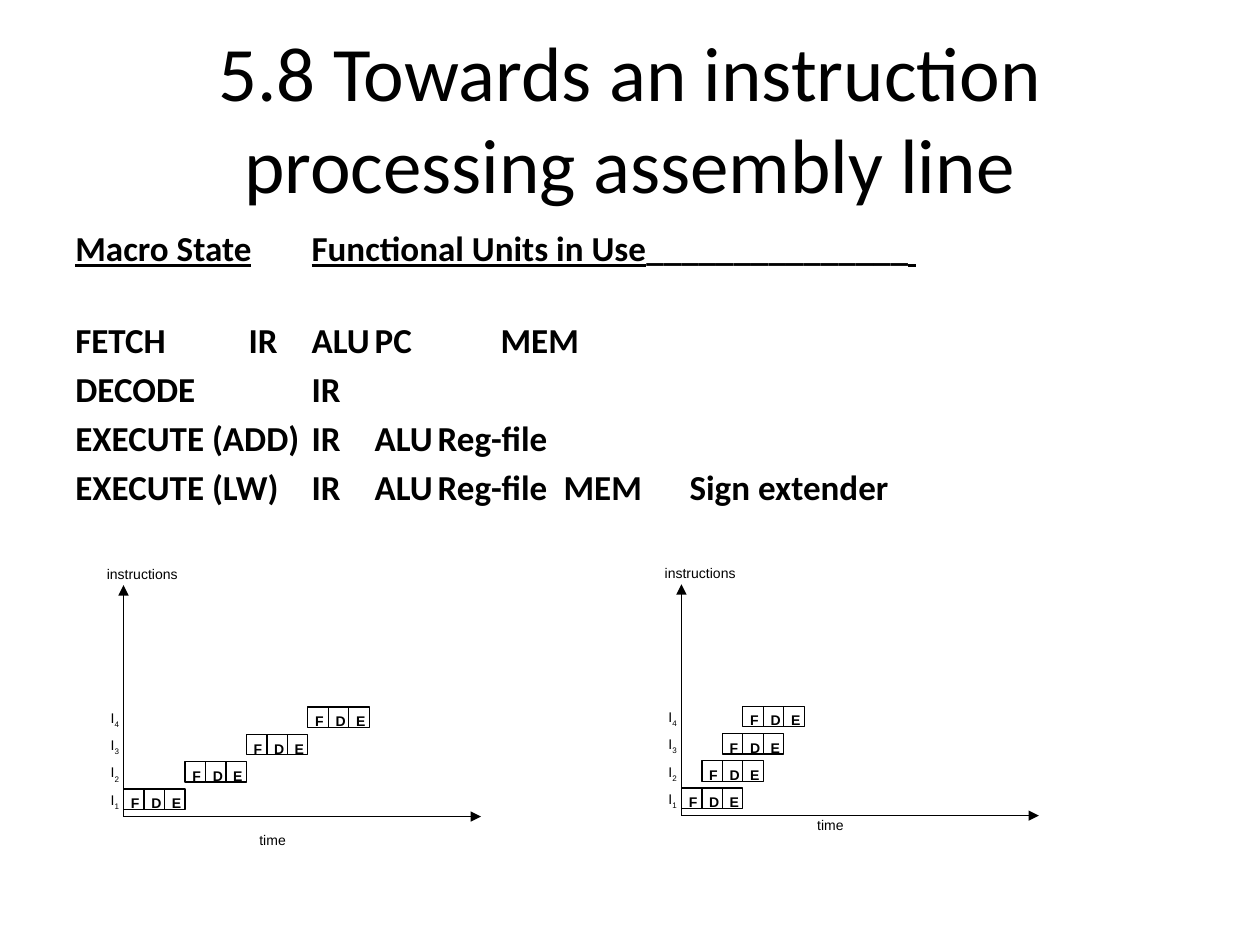
import pptx
import pptx.util
import pptx.dml.color
import pptx.enum.shapes
import pptx.enum.text
import pptx.oxml.ns
import lxml.etree

Pt = pptx.util.Pt
Kind = pptx.enum.shapes
Anchor = pptx.enum.text.MSO_ANCHOR
qn = pptx.oxml.ns.qn

TITLE = "5.8 Towards an instruction processing assembly line"
HEAD = [
    ("Macro State", True, True),
    ("\t", False, False),
    ("Functional Units in Use", True, True),
    ("_______________", True, False),
    (" ", True, True),
]
ROWS = [
    "FETCH\t\tIR\tALU\tPC \t\tMEM",
    "DECODE\t\tIR",
    "EXECUTE (ADD)\tIR\tALU\tReg-file",
    "EXECUTE (LW)\tIR\tALU\tReg-file\tMEM\tSign extender",
]
STAGES = "FDE"
COUNT = 4
CHARTS = [
    {"x": 70.6, "y": 466.6, "step": 3, "time": 7.2},
    {"x": 389.4, "y": 466.1, "step": 1, "time": -0.8},
]
CELL = 11.7
PITCH = 15.6
INK = "000000"


def color(text):
    return pptx.dml.color.RGBColor.from_string(text)


def add_run(para, text, size, font, bold=False, under=False):
    run = para.add_run()
    run.text = text
    run.font.size = Pt(size)
    run.font.name = font
    run.font.bold = bold
    run.font.underline = under
    run.font.color.rgb = color(INK)
    return run


def add_label(group, text, x, y, wide, high, bold=False, sub=None):
    frame = group.shapes.add_textbox(Pt(x), Pt(y), Pt(wide), Pt(high)).text_frame
    frame.word_wrap = True
    frame.margin_left = frame.margin_right = Pt(2.2)
    frame.margin_top = frame.margin_bottom = Pt(1.4)
    para = frame.paragraphs[0]
    add_run(para, text, 8, "Arial", bold)
    if sub:
        frame.vertical_anchor = Anchor.MIDDLE
        run = add_run(para, sub, 8, "Arial")
        run._r.get_or_add_rPr().set("baseline", "-30000")


def add_axis(group, x, y, right, up):
    axis = group.shapes.add_connector(
        Kind.MSO_CONNECTOR.STRAIGHT, Pt(x), Pt(y), Pt(x + right), Pt(y - up))
    axis.line.color.rgb = color(INK)
    axis.line.width = Pt(0.75)
    lxml.etree.SubElement(axis.line._get_or_add_ln(), qn("a:tailEnd"), type="triangle")
    lxml.etree.SubElement(axis._element.spPr, qn("a:effectLst"))


def add_cell(group, text, x, y):
    cell = group.shapes.add_shape(
        Kind.MSO_SHAPE.RECTANGLE, Pt(x), Pt(y), Pt(CELL), Pt(CELL))
    cell.shadow.inherit = False
    cell.fill.background()
    cell.line.color.rgb = color(INK)
    cell.line.width = Pt(0.75)
    add_label(group, text, x + 2, y + 2, 8.4, 9.4, bold=True)


def add_title(slide):
    title = slide.shapes.title
    title.left, title.top, title.width, title.height = Pt(36), Pt(21.6), Pt(648), Pt(90)
    frame = title.text_frame
    frame.vertical_anchor = Anchor.MIDDLE
    para = frame.paragraphs[0]
    para.alignment = pptx.enum.text.PP_ALIGN.CENTER
    add_run(para, TITLE, 44, "Calibri")


def add_body(slide):
    frame = slide.shapes.add_textbox(Pt(36), Pt(126), Pt(648), Pt(154)).text_frame
    frame.word_wrap = True
    lines = [HEAD] + [[(row, True, False)] for row in ROWS]
    for i, line in enumerate(lines):
        para = frame.add_paragraph() if i else frame.paragraphs[0]
        para.space_before = Pt(4)
        para.space_after = Pt(0 if i else 24.4)
        props = para._p.get_or_add_pPr()
        props.set("marL", str(Pt(27)))
        props.set("indent", str(-Pt(27)))
        for text, bold, under in line:
            add_run(para, text, 20, "Calibri", bold, under)


def add_chart(slide, chart):
    group = slide.shapes.add_group_shape()
    x, y = chart["x"], chart["y"]
    add_axis(group, x, y, 0, 132.2)
    add_axis(group, x, y, 204.3, 0)
    add_label(group, "instructions", x - 11.8, y - 144.8, 60, 12)
    add_label(group, "time", x + 75.4, y + chart["time"], 39, 12)
    for row in range(COUNT):
        top = y - 15.8 - row * PITCH
        add_label(group, "I", x - 9.6, top + 2.3, 10, 9.4, sub=str(row + 1))
        for col, stage in enumerate(STAGES):
            add_cell(group, stage, x + (row * chart["step"] + col) * CELL, top)


def main():
    deck = pptx.Presentation()
    deck.slide_width, deck.slide_height = Pt(720), Pt(540)
    slide = deck.slides.add_slide(deck.slide_layouts[5])
    add_title(slide)
    add_body(slide)
    for chart in CHARTS:
        add_chart(slide, chart)
    deck.save("out.pptx")


if __name__ == "__main__":
    main()
